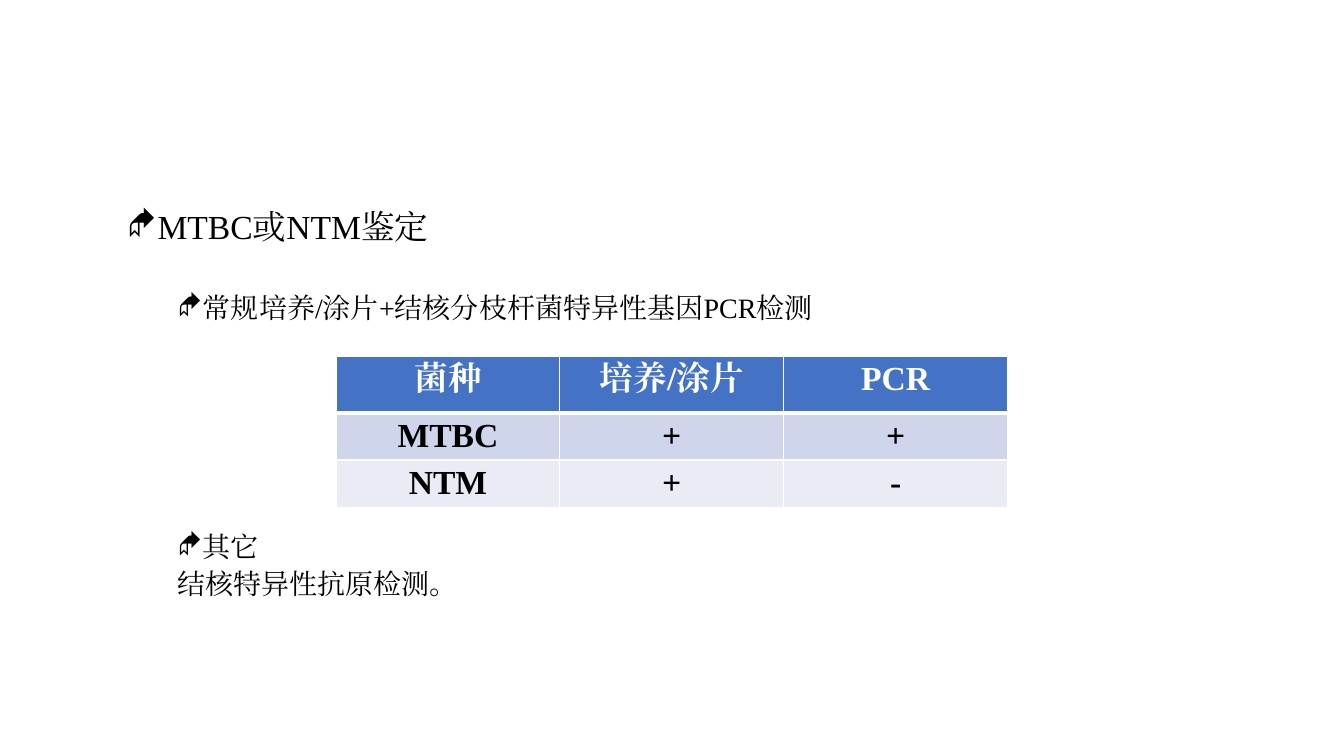
"""Build the slide on telling MTBC from NTM, with a bulleted outline and a result table."""
from lxml import etree
from pptx import Presentation
from pptx.dml.color import RGBColor
from pptx.enum.lang import MSO_LANGUAGE_ID
from pptx.enum.text import MSO_ANCHOR, MSO_AUTO_SIZE, PP_ALIGN
from pptx.oxml.ns import qn
from pptx.util import Cm, Pt

FONT = "Times New Roman"
BLACK = RGBColor(0x00, 0x00, 0x00)
WHITE = RGBColor(0xFF, 0xFF, 0xFF)
HEADER_BLUE = RGBColor(0x44, 0x72, 0xC4)
BAND_DARK = RGBColor(0xCF, 0xD5, 0xEA)
BAND_LIGHT = RGBColor(0xE9, 0xEB, 0xF5)
CHINESE = MSO_LANGUAGE_ID.SIMPLIFIED_CHINESE
CENTER = PP_ALIGN.CENTER
LEFT = PP_ALIGN.LEFT
TOP = MSO_ANCHOR.TOP
NO_AUTOFIT = MSO_AUTO_SIZE.NONE


def write_text(para, text, size=20, color=BLACK, bold=False, align=LEFT):
    para.alignment = align
    span = para.add_run()
    span.text = text
    font = span.font
    font.name, font.size, font.bold = FONT, Pt(size), bold
    font.color.rgb = color
    font.language_id = CHINESE
    latin = font._element.find(qn("a:latin"))
    east_asian = etree.Element(qn("a:ea"), typeface=FONT)
    latin.addnext(east_asian)


def add_border(cell, side, width):
    properties = cell._tc.get_or_add_tcPr()
    line = etree.Element(qn(f"a:{side}"), w=str(Pt(width)))
    fill = etree.SubElement(line, qn("a:solidFill"))
    etree.SubElement(fill, qn("a:srgbClr"), val=str(WHITE))
    properties.append(line)


deck = Presentation()
deck.slide_width, deck.slide_height = Cm(33.87), Cm(19.05)
page = deck.slides.add_slide(deck.slide_layouts[1])
title = page.shapes.title._element
title.getparent().remove(title)

body = page.placeholders[1]
body.left, body.top, body.width, body.height = Cm(2.95), Cm(5.18), Cm(27.99), Cm(4.34)
frame = body.text_frame
frame.word_wrap = True
frame.auto_size = NO_AUTOFIT
frame.vertical_anchor = TOP

outline = [
    ("MTBC或NTM鉴定", 0, 24, 10, 0.64, True),
    ("常规培养/涂片+结核分枝杆菌特异性基因PCR检测", 1, 20, 34, 1.91, True),
    ("其它", 1, 20, 149, 1.91, True),
    ("结核特异性抗原检测。", 1, 20, 5, 1.27, False),
]
for index, (text, level, size, space, margin, bulleted) in enumerate(outline):
    para = frame.paragraphs[0] if index == 0 else frame.add_paragraph()
    para.level = level
    para.line_spacing = 0.9
    para.space_before = Pt(space)
    write_text(para, text, size=size)
    properties = para._p.get_or_add_pPr()
    properties.set("marL", str(Cm(margin)))
    properties.set("indent", str(Cm(-0.64 if bulleted else 0)))
    if bulleted:
        etree.SubElement(properties, qn("a:buFont"), typeface="Wingdings")
        etree.SubElement(properties, qn("a:buChar"), char="◆")
    else:
        etree.SubElement(properties, qn("a:buNone"))

results = [
    (("菌种", "培养/涂片", "PCR"), HEADER_BLUE, WHITE, 1.43),
    (("MTBC", "+", "+"), BAND_DARK, BLACK, 1.18),
    (("NTM", "+", "-"), BAND_LIGHT, BLACK, 1.18),
]
table = page.shapes.add_table(3, 3, Cm(8.47), Cm(8.97), Cm(16.92), Cm(3.79)).table
for column in table.columns:
    column.width = Cm(5.64)
for row_index, (texts, fill_color, text_color, height) in enumerate(results):
    table.rows[row_index].height = Cm(height)
    for column_index, text in enumerate(texts):
        cell = table.cell(row_index, column_index)
        cell.vertical_anchor = TOP
        write_text(cell.text_frame.paragraphs[0], text, size=24,
                   color=text_color, bold=True, align=CENTER)
        for side in ("lnL", "lnR", "lnT", "lnB"):
            below_header = (row_index, side) in ((0, "lnB"), (1, "lnT"))
            add_border(cell, side, 3 if below_header else 1)
        cell.fill.solid()
        cell.fill.fore_color.rgb = fill_color

deck.save("out.pptx")
